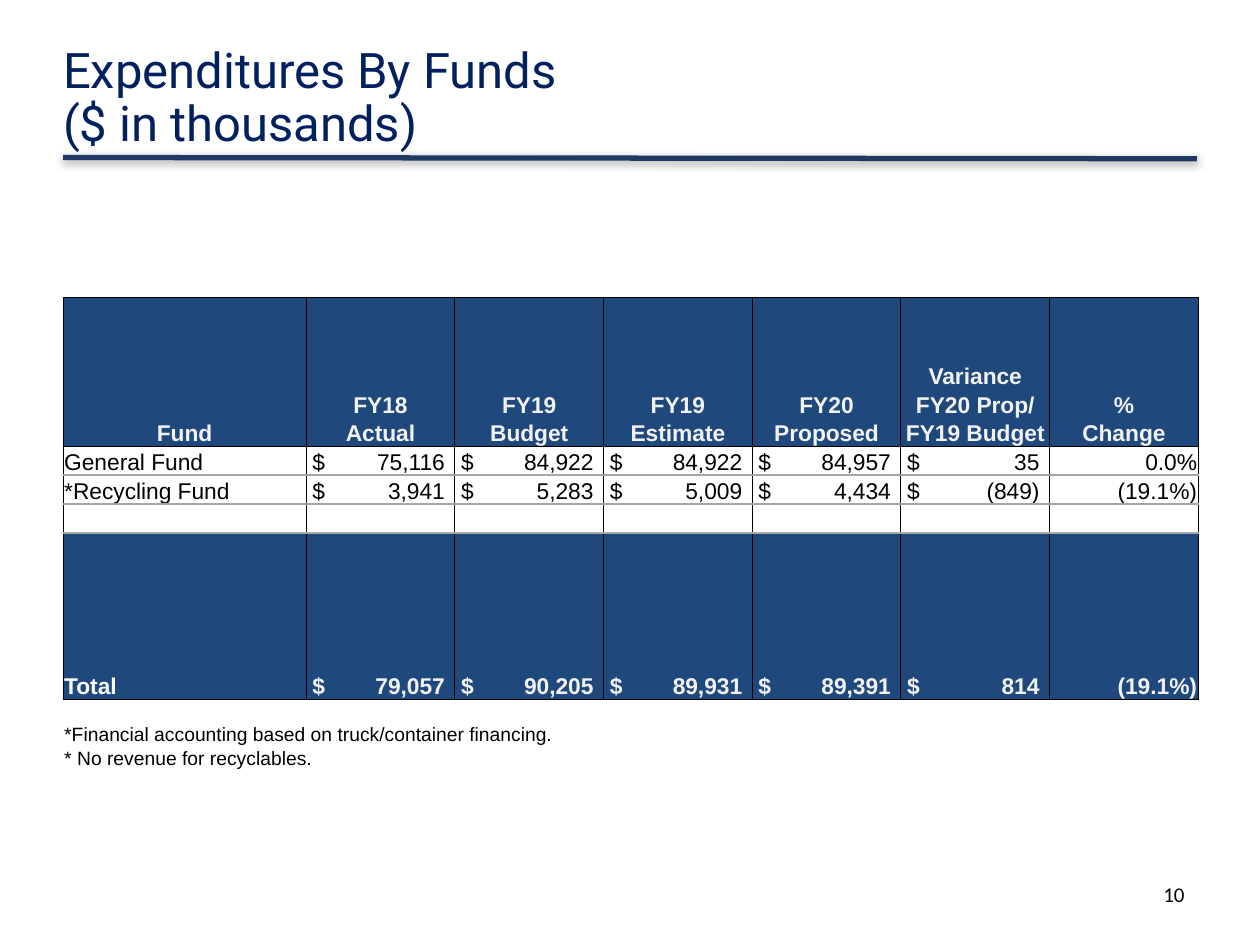
from lxml import etree
from pptx import Presentation
from pptx.dml.color import RGBColor
from pptx.enum.shapes import MSO_CONNECTOR
from pptx.enum.text import MSO_ANCHOR, PP_ALIGN
from pptx.oxml.ns import qn
from pptx.util import Inches, Pt

NAVY = RGBColor(0x00, 0x20, 0x60)
RULE_BLUE = RGBColor(0x20, 0x38, 0x64)
BAND_BLUE = RGBColor(0x1F, 0x49, 0x7D)
PALE = RGBColor(0xF2, 0xF2, 0xF2)
WHITE = RGBColor(0xFF, 0xFF, 0xFF)
BLACK = RGBColor(0x00, 0x00, 0x00)
GREY = RGBColor(0xA6, 0xA6, 0xA6)
LEFT, CENTER, RIGHT = PP_ALIGN.LEFT, PP_ALIGN.CENTER, PP_ALIGN.RIGHT
BOTTOM, MIDDLE = MSO_ANCHOR.BOTTOM, MSO_ANCHOR.MIDDLE
PLAIN_TABLE = "{2D5ABB26-0587-4C30-8999-92F81FD0307C}"

HEADER_ROWS, GAP_ROW, TOTAL_ROW = range(3), 5, 6
THIN, SOFT = (BLACK, 0.5), (GREY, 1)


def write(paragraph, text, align, **font_format):
    run = paragraph.add_run()
    run.text = text
    paragraph.alignment = align
    run.font.color.rgb = font_format.pop("color")
    for name, value in font_format.items():
        setattr(run.font, name, value)


def draw_border(cell, side, color, width):
    line = etree.SubElement(cell._tc.get_or_add_tcPr(), qn(f"a:ln{side}"), w=str(Pt(width)))
    fill = etree.SubElement(line, qn("a:solidFill"))
    etree.SubElement(fill, qn("a:srgbClr"), val=str(color))


prs = Presentation()
prs.slide_width, prs.slide_height = Inches(10), Inches(7.5)
slide = prs.slides.add_slide(prs.slide_layouts[5])

# Rule under the title, with a soft shadow
rule = slide.shapes.add_connector(
    MSO_CONNECTOR.STRAIGHT, Inches(0.5), Inches(1.25), Inches(9.5), Inches(1.26))
rule.line.color.rgb = RULE_BLUE
rule.line.width = Pt(3)
effects = etree.SubElement(rule._element.spPr, qn("a:effectLst"))
shadow = etree.SubElement(effects, qn("a:outerShdw"), blurRad=str(Pt(5)),
                          dist=str(Pt(1.6)), dir="5400000", algn="t", rotWithShape="0")
shadow_color = etree.SubElement(shadow, qn("a:srgbClr"), val=str(BLACK))
etree.SubElement(shadow_color, qn("a:alpha"), val="38000")

# Title
title = slide.shapes.title
title.left, title.top, title.width, title.height = map(Inches, (0.5, 0.33, 6.86, 0.92))
heading = title.text_frame
heading.vertical_anchor = MIDDLE
heading.margin_left = heading.margin_right = heading.margin_top = heading.margin_bottom = 0
heading.text = "Expenditures By Funds\v($ in thousands)"
heading.paragraphs[0].alignment = LEFT
heading.paragraphs[0].line_spacing = 0.9
for run in heading.paragraphs[0].runs:
    run.font.name, run.font.size, run.font.color.rgb = "Roboto", Pt(28), NAVY

# Page number
page = slide.shapes.add_textbox(Inches(7.17), Inches(6.95), Inches(2.33), Inches(0.4))
page.text_frame.word_wrap = True
write(page.text_frame.paragraphs[0], "10", RIGHT, name="Calibri", size=Pt(12), color=BLACK)

# Table contents: header lines, funds, gap, total, footnotes
rows = [
    ["", "", "", "", "", "Variance", ""],
    ["Fund", "FY18", "FY19", "FY19", "FY20", "FY20 Prop/", "%"],
    ["", "Actual", "Budget", "Estimate", "Proposed", "FY19 Budget", "Change"],
    ["General Fund", "75,116", "84,922", "84,922", "84,957", "35", "0.0%"],
    ["*Recycling Fund", "3,941", "5,283", "5,009", "4,434", "(849)", "(19.1%)"],
    [""] * 7,
    ["Total", "79,057", "90,205", "89,931", "89,391", "814", "(19.1%)"],
    [""] * 7,
    ["*Financial accounting based on truck/container financing."] + [""] * 6,
    ["* No revenue for recyclables."] + [""] * 6,
    [""] * 7,
]
row_heights = [0.73, 0.22, 0.22, 0.22, 0.23, 0.23, 1.32, 0.17, 0.19, 0.19, 0.17]
column_widths = [1.93] + [1.18] * 6

frame = slide.shapes.add_table(len(rows), len(column_widths), Inches(0.5), Inches(2.36),
                               Inches(9), Inches(3.89))
table = frame.table
table.first_row = table.horz_banding = False
table._tbl.tblPr.find(qn("a:tableStyleId")).text = PLAIN_TABLE
for column, width in zip(table.columns, column_widths):
    column.width = Inches(width)
for row, height in zip(table.rows, row_heights):
    row.height = Inches(height)

for r, values in enumerate(rows):
    in_header, in_total, in_notes = r in HEADER_ROWS, r == TOTAL_ROW, r > TOTAL_ROW
    for c, value in enumerate(values):
        cell = table.cell(r, c)
        cell.vertical_anchor = BOTTOM
        cell.margin_left = cell.margin_right = cell.margin_top = Inches(0.01)
        cell.margin_bottom = 0

        # Borders and fill
        if not in_notes:
            draw_border(cell, "L", *THIN)
            draw_border(cell, "R", *THIN)
            if r == 0 or r == 3:
                draw_border(cell, "T", *THIN)
            elif not in_header:
                draw_border(cell, "T", *SOFT)
            if r == 2 or in_total:
                draw_border(cell, "B", *THIN)
            elif not in_header:
                draw_border(cell, "B", *SOFT)
        if in_header or in_total:
            cell.fill.solid()
            cell.fill.fore_color.rgb = BAND_BLUE
        else:
            cell.fill.background()

        # Text
        paragraph = cell.text_frame.paragraphs[0]
        if not value:
            paragraph._p.get_or_add_endParaRPr().set("sz", "900")
            continue
        align = CENTER if in_header else RIGHT if c == 6 else LEFT
        if not in_header and 0 < c < 6:
            # Dollar sign at the left, amount on a right tab
            value = f"$\t{value}"
            cell.margin_left = Inches(0.05)
            tabs = etree.SubElement(paragraph._p.get_or_add_pPr(), qn("a:tabLst"))
            etree.SubElement(tabs, qn("a:tab"), pos=str(Inches(1.05)), algn="r")
        color = BLACK
        if in_header or in_total:
            color = WHITE if in_total and c == 0 else PALE
        write(paragraph, value, align, name="Arial", size=Pt(11 if in_notes else 13),
              bold=in_header or in_total, color=color)

# Merged cells: fund heading and footnotes
for first, last in [((1, 0), (2, 0)), ((8, 0), (8, 2)), ((9, 0), (9, 1))]:
    table.cell(*first).merge(table.cell(*last))

prs.save("out.pptx")
